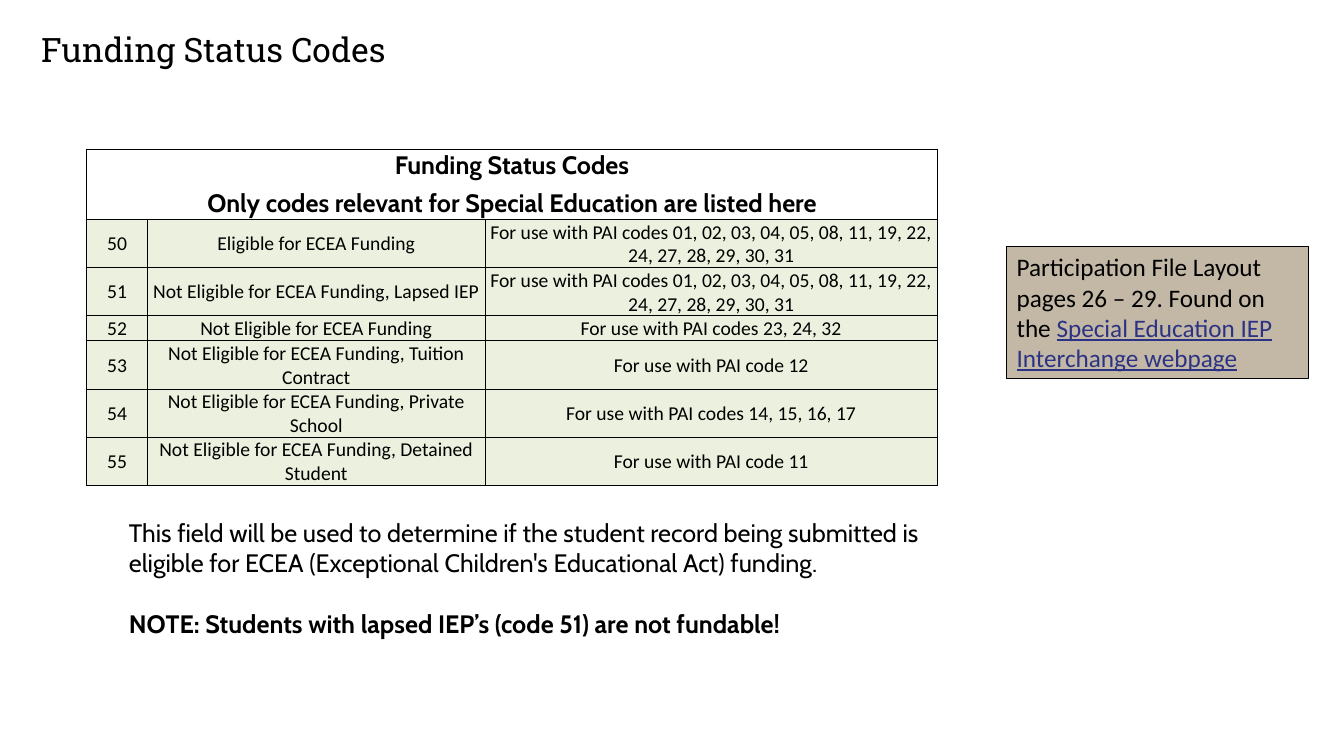
from lxml import etree
from pptx import Presentation
from pptx.dml.color import RGBColor
from pptx.enum.shapes import MSO_SHAPE
from pptx.enum.text import MSO_ANCHOR, PP_ALIGN
from pptx.oxml.ns import qn
from pptx.util import Cm, Pt

RECT = MSO_SHAPE.RECTANGLE
MIDDLE, BOTTOM, TOP = MSO_ANCHOR.MIDDLE, MSO_ANCHOR.BOTTOM, MSO_ANCHOR.TOP
CENTER, LEFT = PP_ALIGN.CENTER, PP_ALIGN.LEFT

COLORS = {"text": "000000", "row": "EBF1DE", "note": "C3B8A5", "link": "2C3384"}
HEADING, BODY, TABLE = "Roboto Slab", "Cabin", "Calibri"

HEADERS = [
    "Funding Status Codes",
    "Only codes relevant for Special Education are listed here",
]
GENERAL_PAI = "For use with PAI codes 01, 02, 03, 04, 05, 08, 11, 19, 22, 24, 27, 28, 29, 30, 31"
STATUS_CODES = [
    ("50", "Eligible for ECEA Funding", GENERAL_PAI),
    ("51", "Not Eligible for ECEA Funding, Lapsed IEP", GENERAL_PAI),
    ("52", "Not Eligible for ECEA Funding", "For use with PAI codes 23, 24, 32"),
    ("53", "Not Eligible for ECEA Funding, Tuition Contract", "For use with PAI code 12"),
    ("54", "Not Eligible for ECEA Funding, Private School", "For use with PAI codes 14, 15, 16, 17"),
    ("55", "Not Eligible for ECEA Funding, Detained Student", "For use with PAI code 11"),
]


class SlideBuilder:
    def __init__(self, prs):
        self.s = prs.slides.add_slide(prs.slide_layouts[6])

    def color(self, name):
        return RGBColor.from_string(COLORS[name])

    def style(self, r, font, size, bold=False, color="text"):
        r.font.name = font
        r.font.size = Pt(size)
        r.font.bold = bold
        r.font.color.rgb = self.color(color)

    def text(self, box, paragraphs, font, size, anchor=TOP, gap=0):
        sp = self.s.shapes.add_textbox(*map(Cm, box))
        tf = sp.text_frame
        tf.word_wrap = True
        tf.vertical_anchor = anchor
        for i, (words, bold) in enumerate(paragraphs):
            p = tf.add_paragraph() if i else tf.paragraphs[0]
            p.text = words
            if i:
                p.space_before = Pt(gap)
            self.style(p.runs[0], font, size, bold)

    def callout(self, box, words, link):
        sp = self.s.shapes.add_shape(RECT, *map(Cm, box))
        sp.shadow.inherit = False
        sp.fill.solid()
        sp.fill.fore_color.rgb = self.color("note")
        sp.line.color.rgb = self.color("text")
        sp.line.width = Pt(0.25)
        tf = sp.text_frame
        tf.word_wrap = True
        p = tf.paragraphs[0]
        p.alignment = LEFT
        for part, color in ((words, "text"), (link, "link")):
            r = p.add_run()
            r.text = part
            self.style(r, TABLE, 18, color=color)
            r.font.underline = color == "link"

    def borders(self, cell, skip):
        tc_pr = cell._tc.get_or_add_tcPr()
        for side in ("lnL", "lnR", "lnT", "lnB"):
            ln = etree.SubElement(tc_pr, qn("a:" + side), w=str(Pt(0.5)))
            if side == skip:
                etree.SubElement(ln, qn("a:noFill"))
            else:
                fill = etree.SubElement(ln, qn("a:solidFill"))
                etree.SubElement(fill, qn("a:srgbClr"), val=COLORS["text"])

    def cell(self, cell, words, header, skip=None):
        self.borders(cell, skip)
        if header:
            cell.fill.background()
        else:
            cell.fill.solid()
            cell.fill.fore_color.rgb = self.color("row")
        cell.margin_left = cell.margin_right = cell.margin_top = Cm(0.03)
        cell.margin_bottom = 0
        cell.vertical_anchor = BOTTOM if header else MIDDLE
        if words:
            p = cell.text_frame.paragraphs[0]
            p.text = words
            p.alignment = CENTER
            self.style(p.runs[0], BODY if header else TABLE, 18 if header else 14, header)

    def table(self, left, top, widths, heights, headers, rows):
        frame = self.s.shapes.add_table(
            len(heights), len(widths), Cm(left), Cm(top), Cm(sum(widths)), Cm(sum(heights)))
        table = frame.table
        table.first_row = table.horz_banding = False
        for column, width in zip(table.columns, widths):
            column.width = Cm(width)
        for row, height in zip(table.rows, heights):
            row.height = Cm(height)
        blanks = [""] * (len(widths) - 1)
        for i, header in enumerate(headers):
            table.cell(i, 0).merge(table.cell(i, len(widths) - 1))
            for j, words in enumerate([header] + blanks):
                self.cell(table.cell(i, j), words, True, "lnT" if i else "lnB")
        for i, row in enumerate(rows, len(headers)):
            for j, words in enumerate(row):
                self.cell(table.cell(i, j), words, False)


def main():
    prs = Presentation()
    prs.slide_width, prs.slide_height = Cm(33.87), Cm(19.05)
    slide = SlideBuilder(prs)
    slide.text((0.79, 0.61, 20.04, 1.27), [("Funding Status Codes", False)], HEADING, 24, MIDDLE)
    slide.table(2.18, 3.76, [1.54, 8.5, 11.41], [0.79, 0.97] + [0.48] * len(STATUS_CODES),
                HEADERS, STATUS_CODES)
    slide.text((3, 12.9, 21.67, 4.78), [
        ("This field will be used to determine if the student record being submitted is "
         "eligible for ECEA (Exceptional Children's Educational Act) funding.", False),
        ("NOTE: Students with lapsed IEP’s (code 51) are not fundable!", True),
    ], BODY, 18, gap=22)
    slide.callout((25.37, 6.2, 7.59, 3.33),
                  "Participation File Layout pages 26 – 29. Found on the ",
                  "Special Education IEP Interchange webpage")
    prs.save("out.pptx")


if __name__ == "__main__":
    main()
